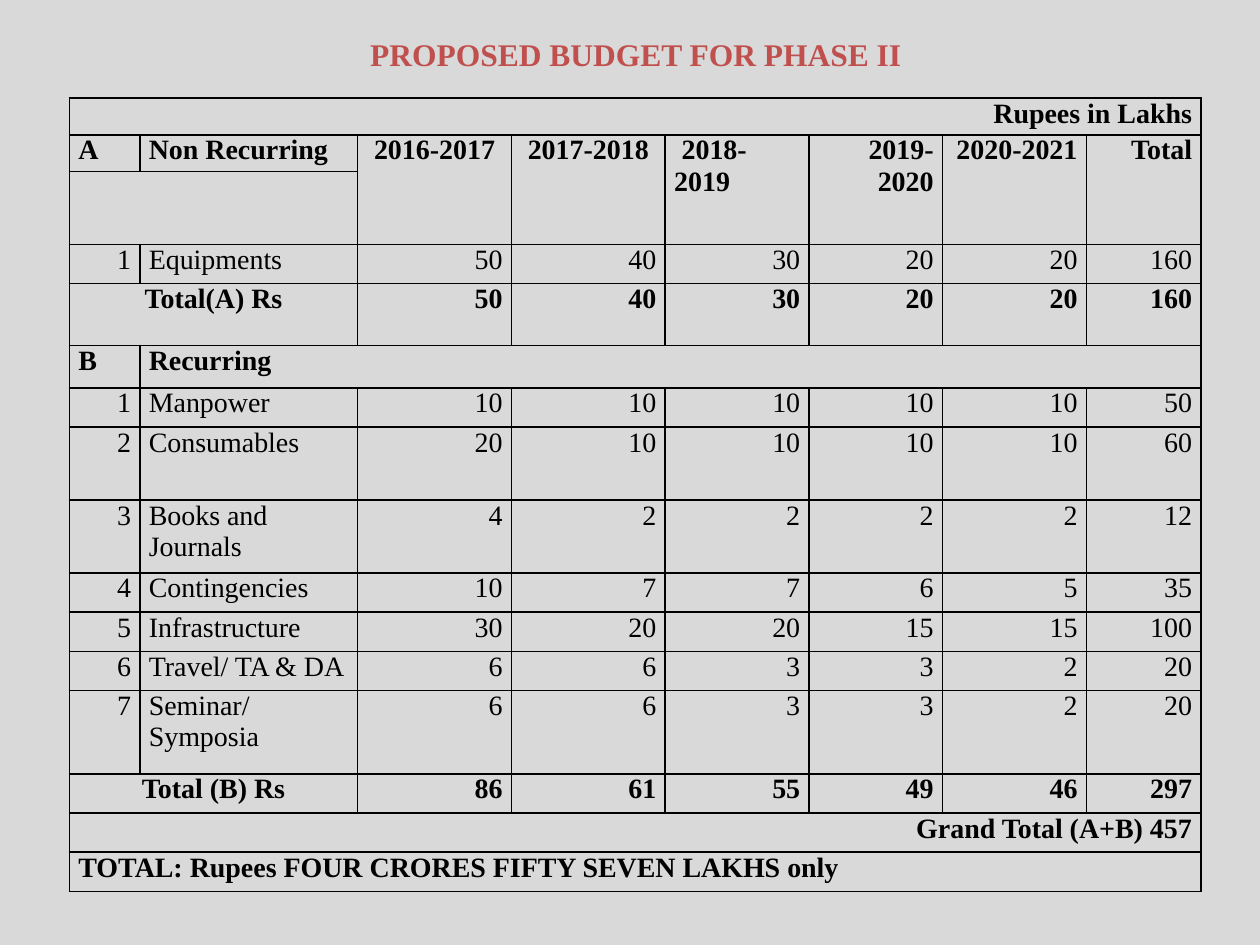
from dataclasses import dataclass

from lxml.etree import SubElement
from pptx import Presentation
from pptx.dml.color import RGBColor
from pptx.enum.text import MSO_ANCHOR, PP_ALIGN
from pptx.oxml import parse_xml
from pptx.oxml.ns import nsdecls
from pptx.util import Cm, Pt


@dataclass(frozen=True)
class Theme:
    font: str = "Times New Roman"
    background: str = "D9D9D9"
    title: str = "C0504D"
    ink: str = "000000"
    title_size: int = 18
    table_size: int = 16
    border_width: int = 1


COLUMN_WIDTHS = [1.42, 4.39, 3.1, 3.1, 2.9, 2.69, 2.9, 2.31]
ROW_HEIGHTS = [0.74, 0.74, 1.47, 0.79, 1.24, 0.86, 0.79, 1.47,
               1.47, 0.79, 0.79, 0.79, 1.68, 0.79, 0.79, 0.79]
BUDGET = [
    ["Rupees in Lakhs"],
    ["A", "Non Recurring", "2016-2017", "2017-2018", "2018-2019",
     "2019-2020", "2020-2021", "Total"],
    [],
    ["1", "Equipments", 50, 40, 30, 20, 20, 160],
    ["Total(A) Rs", "", 50, 40, 30, 20, 20, 160],
    ["B", "Recurring"],
    ["1", "Manpower", 10, 10, 10, 10, 10, 50],
    ["2", "Consumables", 20, 10, 10, 10, 10, 60],
    ["3", "Books and Journals", 4, 2, 2, 2, 2, 12],
    ["4", "Contingencies", 10, 7, 7, 6, 5, 35],
    ["5", "Infrastructure", 30, 20, 20, 15, 15, 100],
    ["6", "Travel/ TA & DA", 6, 6, 3, 3, 2, 20],
    ["7", "Seminar/ Symposia", 6, 6, 3, 3, 2, 20],
    ["Total (B) Rs", "", 86, 61, 55, 49, 46, 297],
    ["Grand Total (A+B) 457"],
    ["TOTAL: Rupees FOUR CRORES FIFTY SEVEN LAKHS only"],
]
FULL_WIDTH_ROWS = [0, 14, 15]
LABEL_ROWS = [2, 4, 13]
MERGES = (
    [(row, 0, row, 7) for row in FULL_WIDTH_ROWS]
    + [(row, 0, row, 1) for row in LABEL_ROWS]
    + [(1, column, 2, column) for column in range(2, 8)]
    + [(5, 1, 5, 7)]
)
INDENTED_YEARS = ["2016-2017", "2017-2018", "2018-2019"]
ALIGNMENTS = {
    "Rupees in Lakhs": PP_ALIGN.RIGHT,
    "Grand Total (A+B) 457": PP_ALIGN.RIGHT,
    "Total(A) Rs": PP_ALIGN.CENTER,
    "Total (B) Rs": PP_ALIGN.CENTER,
    **dict.fromkeys(INDENTED_YEARS, PP_ALIGN.LEFT),
}


def cell_alignment(text, column):
    numeric = text.isdigit() or column > 1
    return ALIGNMENTS.get(text, PP_ALIGN.RIGHT if numeric else PP_ALIGN.LEFT)


class SlideBuilder:
    def __init__(self, slide, theme):
        self.slide = slide
        self.theme = theme

    def background(self):
        fill = self.slide.background.fill
        fill.solid()
        fill.fore_color.rgb = RGBColor.from_string(self.theme.background)

    def format_runs(self, paragraph, size, color, bold):
        for run in paragraph.runs:
            run.font.name = self.theme.font
            run.font.size = Pt(size)
            run.font.bold = bold
            run.font.color.rgb = RGBColor.from_string(color)

    def title(self, text, left, top, width, height):
        shape = self.slide.shapes.title
        shape.left, shape.top = Cm(left), Cm(top)
        shape.width, shape.height = Cm(width), Cm(height)
        text_frame = shape.text_frame
        text_frame.text = text
        text_frame.vertical_anchor = MSO_ANCHOR.TOP
        paragraph = text_frame.paragraphs[0]
        paragraph.alignment = PP_ALIGN.CENTER
        self.format_runs(paragraph, self.theme.title_size, self.theme.title, True)

    def borders(self, cell):
        properties = cell._tc.get_or_add_tcPr()
        for position, side in enumerate(["lnL", "lnR", "lnT", "lnB"]):
            line = parse_xml(f'<a:{side} {nsdecls("a")} w="{Pt(self.theme.border_width)}"/>')
            fill = SubElement(line, f"{{{line.nsmap['a']}}}solidFill")
            SubElement(fill, f"{{{line.nsmap['a']}}}srgbClr", val=self.theme.ink)
            properties.insert(position, line)

    def cell(self, cell, text, column, bold):
        cell.margin_left = cell.margin_right = Cm(0.18)
        cell.margin_top = cell.margin_bottom = 0
        cell.fill.background()
        self.borders(cell)
        cell.text_frame.text = text
        paragraph = cell.text_frame.paragraphs[0]
        paragraph.alignment = cell_alignment(text, column)
        if text in INDENTED_YEARS:
            paragraph._p.get_or_add_pPr().set("indent", str(Cm(0.15)))
        self.format_runs(paragraph, self.theme.table_size, self.theme.ink, bold)

    def table(self, rows, left, top, column_widths, row_heights, merges):
        frame = self.slide.shapes.add_table(
            len(row_heights), len(column_widths), Cm(left), Cm(top),
            Cm(sum(column_widths)), Cm(sum(row_heights)))
        table = frame.table
        table.first_row = table.horz_banding = False
        for column, width in zip(table.columns, column_widths):
            column.width = Cm(width)
        for row, height in zip(table.rows, row_heights):
            row.height = Cm(height)
        for row_index, values in enumerate(rows):
            bold = not (values and values[0].isdigit())
            padded = values + [""] * (len(column_widths) - len(values))
            for column_index, value in enumerate(padded):
                self.cell(table.cell(row_index, column_index), str(value),
                          column_index, bold)
        for first_row, first_column, last_row, last_column in merges:
            table.cell(first_row, first_column).merge(
                table.cell(last_row, last_column))


def main():
    presentation = Presentation()
    presentation.slide_width, presentation.slide_height = Cm(25.4), Cm(19.05)
    slide = presentation.slides.add_slide(presentation.slide_layouts[5])
    builder = SlideBuilder(slide, Theme())
    builder.background()
    builder.table(BUDGET, 1.4, 1.98, COLUMN_WIDTHS, ROW_HEIGHTS, MERGES)
    builder.title("PROPOSED BUDGET FOR PHASE II", 6.76, 0.58, 12.12, 1.02)
    presentation.save("out.pptx")


if __name__ == "__main__":
    main()
